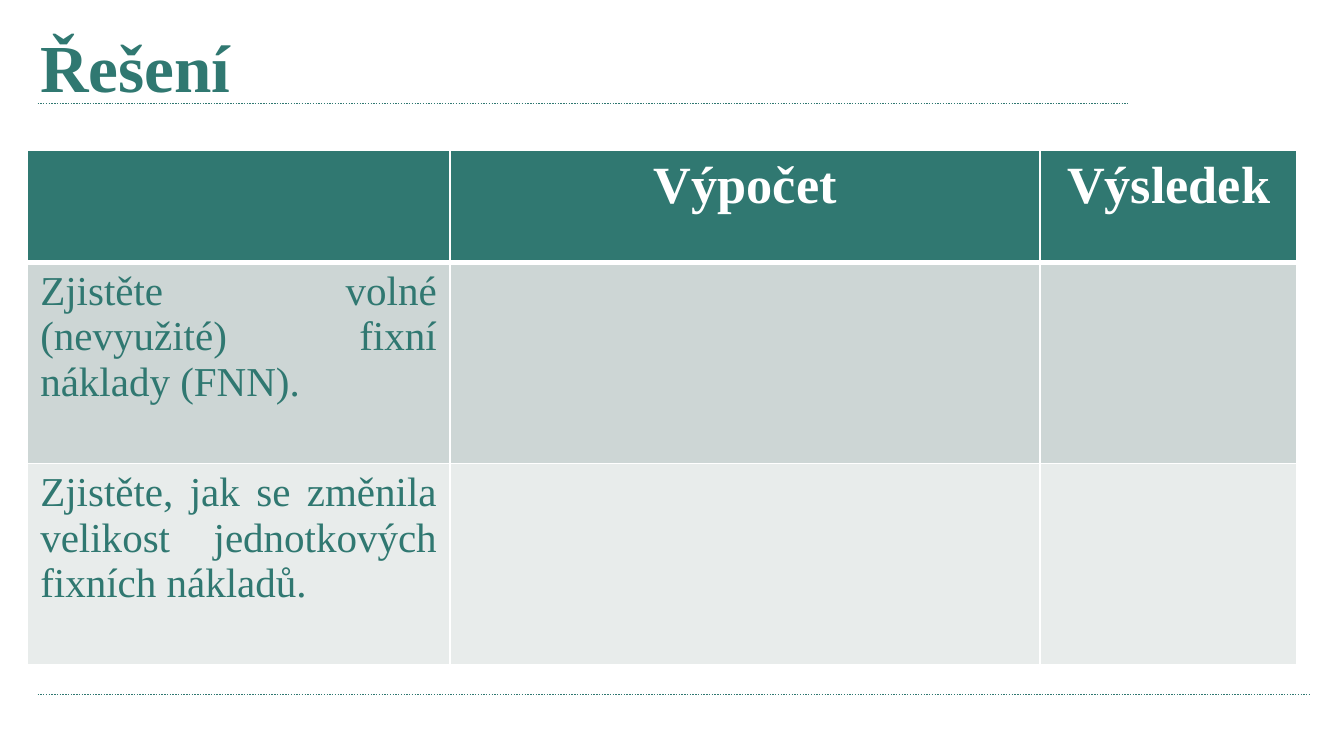
from dataclasses import dataclass

from lxml.etree import SubElement
from pptx import Presentation
from pptx.dml.color import RGBColor
from pptx.enum.dml import MSO_LINE
from pptx.enum.shapes import MSO_CONNECTOR
from pptx.enum.text import MSO_ANCHOR, MSO_AUTO_SIZE, PP_ALIGN
from pptx.oxml import parse_xml
from pptx.oxml.ns import nsdecls, qn
from pptx.util import Inches, Pt


@dataclass(frozen=True)
class Theme:
    font: str = "Times New Roman"
    accent: str = "307871"
    white: str = "FFFFFF"
    bands: tuple = ("CDD6D5", "E8ECEB")
    title_size: int = 36
    header_size: int = 28
    body_size: int = 22


THEME = Theme()
SLIDE_WIDTH = 10
SLIDE_HEIGHT = SLIDE_WIDTH * 9 / 16
MARGIN = 0.2
COLUMN_WIDTHS = (3.15, 4.39, 1.91)
ROW_HEIGHTS = (0.83, 1.5, 1.5)
TABLE_ROWS = (
    ("", "Výpočet", "Výsledek"),
    ("Zjistěte volné (nevyužité) fixní náklady (FNN).", "", ""),
    ("Zjistěte, jak se změnila velikost jednotkových fixních nákladů.", "", ""),
)


def write_text(text_frame, text, *, size, color=THEME.accent, bold=False,
               align=PP_ALIGN.LEFT):
    paragraph = text_frame.paragraphs[0]
    paragraph.alignment = align
    run = paragraph.add_run()
    run.text = text
    run.font.name = THEME.font
    run.font.size = Pt(size)
    run.font.bold = bold
    run.font.color.rgb = RGBColor.from_string(color)


def add_title(slide, text):
    title = slide.shapes.title
    title.left, title.top = Inches(MARGIN), Inches(0.14)
    title.width, title.height = Inches(8.82), Inches(0.79)
    text_frame = title.text_frame
    text_frame.auto_size = MSO_AUTO_SIZE.NONE
    text_frame.vertical_anchor = MSO_ANCHOR.MIDDLE
    text_frame.margin_bottom = Inches(0.14)  # keeps the text above the rule
    write_text(text_frame, text, size=THEME.title_size, bold=True)


def add_dotted_rule(slide, right, top):
    rule = slide.shapes.add_connector(
        MSO_CONNECTOR.STRAIGHT, Inches(0.28), Inches(top), Inches(right), Inches(top))
    rule.line.color.rgb = RGBColor.from_string(THEME.accent)
    rule.line.width = Pt(0.75)
    rule.line.dash_style = MSO_LINE.ROUND_DOT
    SubElement(rule.element.spPr, qn("a:effectLst"))


def set_borders(cell, top=1, bottom=1):
    """Draw white borders; the side elements must precede the cell's fill."""
    properties = cell._tc.get_or_add_tcPr()
    sides = (("lnL", 1), ("lnR", 1), ("lnT", top), ("lnB", bottom))
    for position, (side, width) in enumerate(sides):
        properties.insert(position, parse_xml(
            f'<a:{side} {nsdecls("a")} w="{Pt(width)}"><a:solidFill>'
            f'<a:srgbClr val="{THEME.white}"/></a:solidFill></a:{side}>'))


def format_cell(cell, text, row):
    is_header = row == 0
    cell.fill.solid()
    cell.fill.fore_color.rgb = RGBColor.from_string(
        THEME.accent if is_header else THEME.bands[(row - 1) % 2])
    # A thick line separates the header from the first body row
    set_borders(cell, top=3 if row == 1 else 1, bottom=3 if is_header else 1)
    if text and is_header:
        write_text(cell.text_frame, text, size=THEME.header_size,
                   color=THEME.white, bold=True, align=PP_ALIGN.CENTER)
    elif text:
        write_text(cell.text_frame, text, size=THEME.body_size,
                   align=PP_ALIGN.JUSTIFY)


def add_solution_table(slide):
    table = slide.shapes.add_table(
        len(ROW_HEIGHTS), len(COLUMN_WIDTHS), Inches(MARGIN), Inches(1.12),
        Inches(sum(COLUMN_WIDTHS)), Inches(sum(ROW_HEIGHTS))).table
    for column, width in zip(table.columns, COLUMN_WIDTHS):
        column.width = Inches(width)
    for row, height in zip(table.rows, ROW_HEIGHTS):
        row.height = Inches(height)
    for row, texts in enumerate(TABLE_ROWS):
        for column, text in enumerate(texts):
            format_cell(table.cell(row, column), text, row)


def main():
    presentation = Presentation()
    presentation.slide_width = Inches(SLIDE_WIDTH)
    presentation.slide_height = Inches(SLIDE_HEIGHT)
    title_only = presentation.slide_layouts.get_by_name("Title Only")
    slide = presentation.slides.add_slide(title_only)

    # Rules under the title and above the footer
    add_dotted_rule(slide, right=8.39, top=0.77)
    add_dotted_rule(slide, right=9.75, top=5.17)

    # Heading and table
    add_title(slide, "Řešení")
    add_solution_table(slide)
    presentation.save("out.pptx")


if __name__ == "__main__":
    main()
